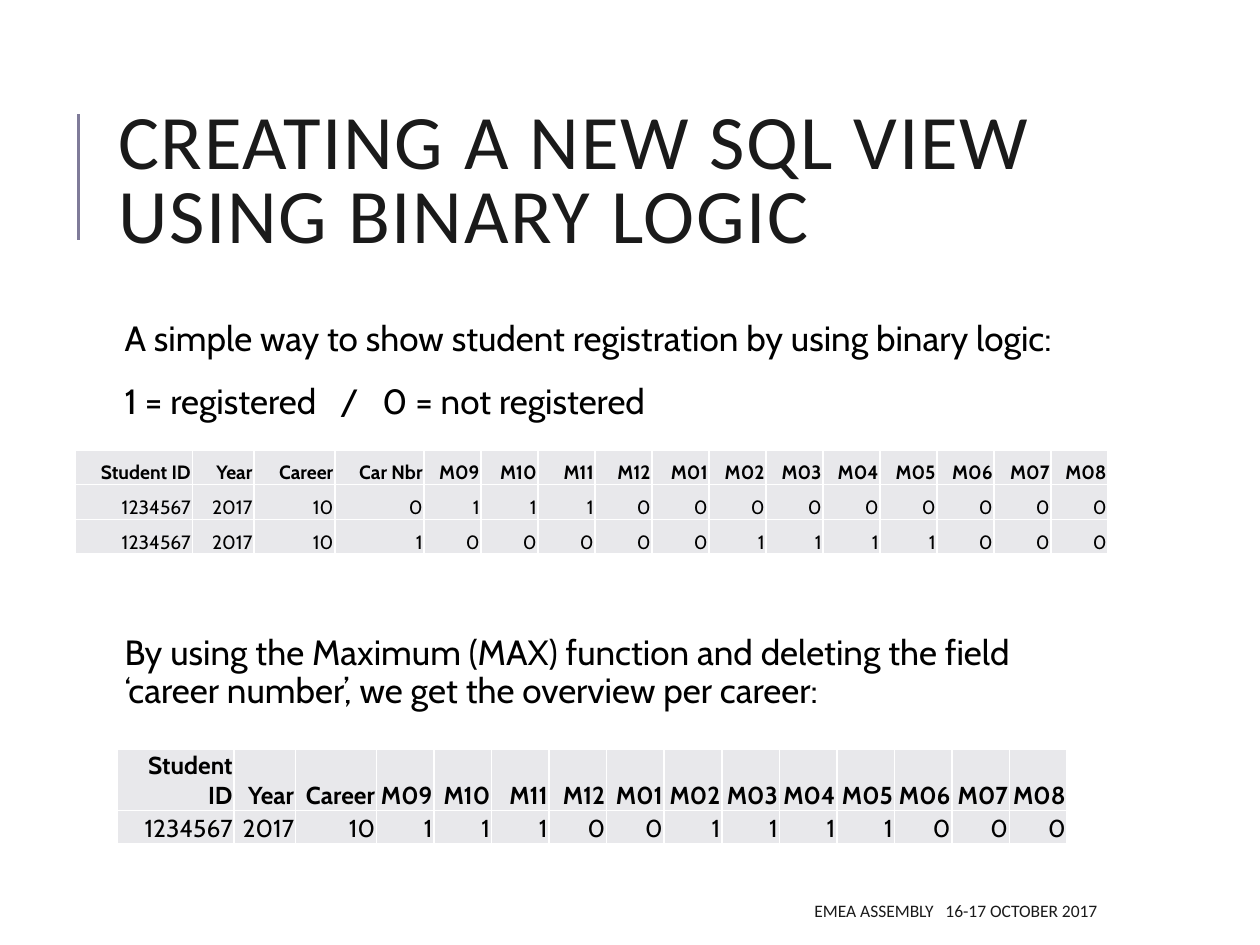
from dataclasses import dataclass

from lxml.etree import SubElement
from pptx import Presentation
from pptx.dml.color import RGBColor as RGB
from pptx.enum.shapes import MSO_CONNECTOR as CONN
from pptx.enum.text import MSO_ANCHOR as ANCHOR, MSO_AUTO_SIZE as FIT, PP_ALIGN as ALIGN
from pptx.oxml import parse_xml
from pptx.oxml.ns import nsdecls, qn
from pptx.util import Cm, Pt


@dataclass(frozen=True)
class Theme:
    heading_font: str = "Calibri"
    body_font: str = "Cabin"
    heading: str = "1A1A1A"
    body: str = "000000"
    accent: str = "7F7B99"
    cell: str = "E8E8EB"
    border: str = "FFFFFF"
    title_size: int = 44
    body_size: int = 20
    footer_size: int = 10
    detail_size: int = 11
    summary_size: int = 14


def write(p, text, font, size, color, bold=False, align=ALIGN.LEFT,
          line=1.0, before=0, after=0, tracking=0):
    p.alignment, p.line_spacing = align, line
    p.space_before, p.space_after = Pt(before), Pt(after)

    def add(part, spacing):
        r = p.add_run()
        r.text = part
        r.font.name, r.font.size, r.font.bold = font, Pt(size), bold
        r.font.color.rgb = RGB.from_string(color)
        if spacing:
            r.font._element.set("spc", str(round(spacing * 100)))

    for i, part in enumerate(text.split("|")):
        if i:
            add(" ", size * 0.45)
        add(part, tracking)


class SlideBuilder:
    def __init__(self, s, theme):
        self.s, self.theme = s, theme

    def place(self, sp, left, top, width, height, anchor=ANCHOR.TOP):
        sp.left, sp.top, sp.width, sp.height = map(Cm, (left, top, width, height))
        tf = sp.text_frame
        tf.word_wrap, tf.auto_size, tf.vertical_anchor = True, FIT.NONE, anchor
        return tf

    def title(self, text, *box):
        t = self.theme
        tf = self.place(self.s.shapes.title, *box, anchor=ANCHOR.MIDDLE)
        write(tf.paragraphs[0], text, t.heading_font, t.title_size, t.heading,
              line=0.8, tracking=1)

    def body(self, items, *box):
        t = self.theme
        tf = self.place(self.s.placeholders[1], *box)
        tf.margin_left = Cm(0.38)
        tf.margin_top = tf.margin_right = tf.margin_bottom = Cm(0.13)
        for i, (text, before) in enumerate(items):
            p = tf.add_paragraph() if i else tf.paragraphs[0]
            write(p, text, t.body_font, t.body_size, t.body,
                  line=0.9, before=before, after=2)
            pPr = p._p.get_or_add_pPr()
            pPr.set("marL", "0")
            pPr.set("indent", "0")
            SubElement(pPr, qn("a:buNone"))

    def footer(self, text, *box):
        t = self.theme
        sp = self.s.shapes.add_textbox(*map(Cm, box))
        tf = self.place(sp, *box, anchor=ANCHOR.MIDDLE)
        write(tf.paragraphs[0], text, t.heading_font, t.footer_size, t.heading,
              align=ALIGN.RIGHT)

    def rule(self, x1, y1, x2, y2):
        ln = self.s.shapes.add_connector(CONN.STRAIGHT, *map(Cm, (x1, y1, x2, y2)))
        ln.line.color.rgb = RGB.from_string(self.theme.accent)
        ln.line.width = Pt(1.5)
        SubElement(ln._element.spPr, qn("a:effectLst"))

    def table(self, rows, left, top, widths, row_height, size):
        box = map(Cm, (left, top, sum(widths), row_height * len(rows)))
        tbl = self.s.shapes.add_table(len(rows), len(widths), *box).table
        tbl.first_row = tbl.horz_banding = False
        for col, width in zip(tbl.columns, widths):
            col.width = Cm(width)
        for y, row in enumerate(rows):
            tbl.rows[y].height = Cm(row_height)
            for x, text in enumerate(row):
                self.cell(tbl.cell(y, x), text, size, bold=y == 0)

    def cell(self, cell, text, size, bold):
        t = self.theme
        cell.margin_left = cell.margin_right = cell.margin_top = Cm(0.03)
        cell.margin_bottom = 0
        cell.vertical_anchor = ANCHOR.BOTTOM
        cell.fill.solid()
        cell.fill.fore_color.rgb = RGB.from_string(t.cell)
        tcPr = cell._tc.get_or_add_tcPr()
        for i, side in enumerate("LRTB"):
            tcPr.insert(i, parse_xml(
                f'<a:ln{side} {nsdecls("a")} w="{Pt(1)}"><a:solidFill>'
                f'<a:srgbClr val="{t.border}"/></a:solidFill></a:ln{side}>'))
        write(cell.text_frame.paragraphs[0], text, t.body_font, size, t.body,
              bold=bold, align=ALIGN.RIGHT)


def main():
    prs = Presentation()
    prs.slide_width, prs.slide_height = Cm(25.4), Cm(19.05)
    theme = Theme()
    slide = SlideBuilder(prs.slides.add_slide(prs.slide_layouts[1]), theme)

    slide.rule(1.58, 4.83, 1.58, 2.29)
    slide.title("CREATING A NEW SQL VIEW USING BINARY LOGIC", 2.13, 1.63, 20.24, 4.17)
    slide.body([
        ("A simple way to show student registration by using binary logic:", 12),
        ("1 = registered|/|0 = not registered", 12),
        ("By using the Maximum (MAX) function and deleting the field "
         "‘career number’, we get the overview per career:", 120),
    ], 2.13, 6.35, 20.24, 11.18)
    slide.footer("EMEA ASSEMBLY|16-17 OCTOBER 2017", 10.08, 17.98, 12.29, 0.76)

    months = [f"M{(m + 8) % 12 + 1:02d}" for m in range(12)]
    keys = ["Student ID", "Year", "Career"]
    student = ["1234567", "2017", "10"]
    key_widths = [2.36, 1.24, 1.63]
    careers = ["111000000000", "000001111000"]
    overall = [max(pair) for pair in zip(*careers)]

    detail = [keys + ["Car Nbr"] + months]
    detail += [student + [str(n), *flags] for n, flags in enumerate(careers)]
    slide.table(detail, 1.52, 9.07, key_widths + [1.8] + [1.15] * 12, 0.7,
                theme.detail_size)
    slide.table([keys + months, student + overall], 2.36, 15.11,
                key_widths + [1.16] * 12, 0.67, theme.summary_size)

    prs.save("out.pptx")


if __name__ == "__main__":
    main()
